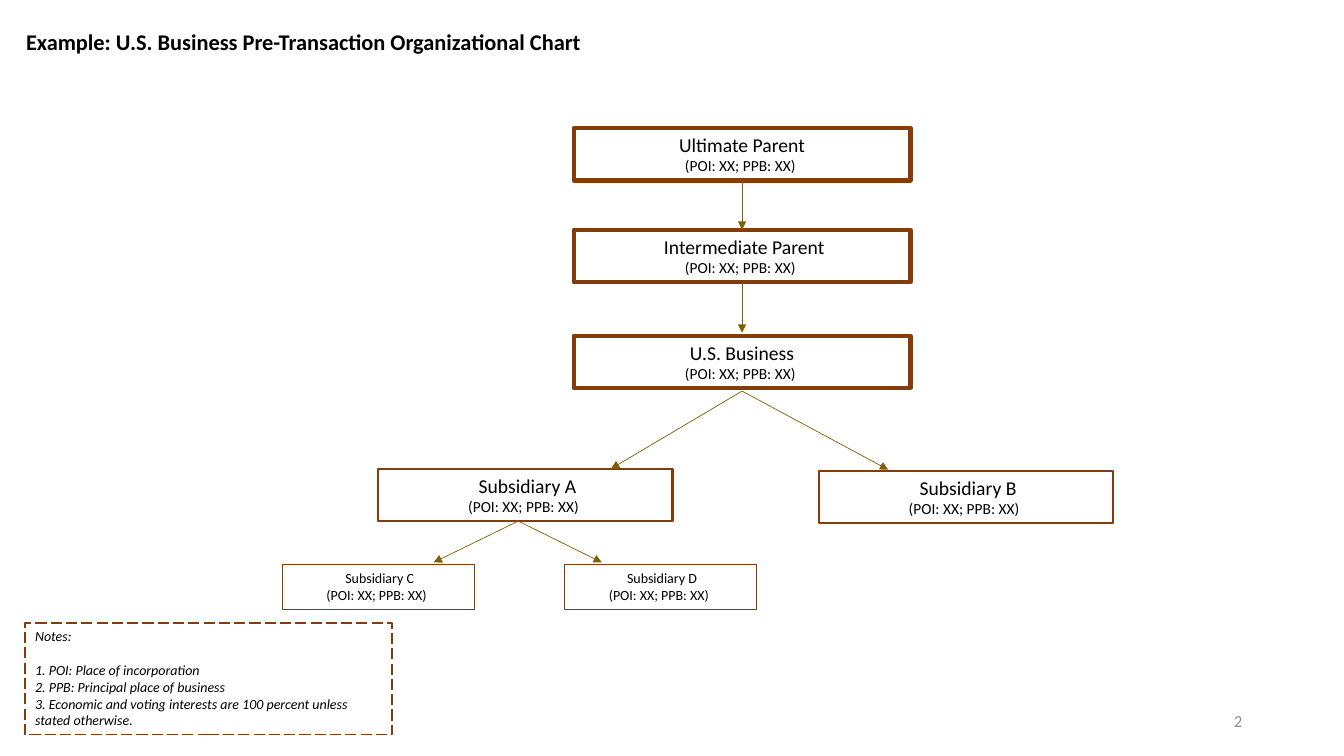
"""Build the pre-transaction organizational chart slide."""
from dataclasses import dataclass

from lxml import etree
from pptx import Presentation
from pptx.dml.color import RGBColor
from pptx.enum.dml import MSO_LINE
from pptx.enum.shapes import MSO_CONNECTOR, MSO_SHAPE
from pptx.enum.text import MSO_ANCHOR, PP_ALIGN
from pptx.oxml.ns import qn
from pptx.util import Inches, Pt

RECTANGLE = MSO_SHAPE.RECTANGLE
STRAIGHT = MSO_CONNECTOR.STRAIGHT
LONG_DASH = MSO_LINE.LONG_DASH
TOP, MIDDLE = MSO_ANCHOR.TOP, MSO_ANCHOR.MIDDLE
LEFT, CENTER, RIGHT = PP_ALIGN.LEFT, PP_ALIGN.CENTER, PP_ALIGN.RIGHT


@dataclass(frozen=True)
class Theme:
    """Colours, font and type sizes of the slide."""
    font: str = "Calibri"
    ink: str = "000000"
    paper: str = "FFFFFF"
    border: str = "843C0B"
    arrow: str = "806000"
    muted: str = "8C8C8C"
    title: int = 16
    name: int = 14
    detail: int = 11
    small: int = 10
    page_number: int = 12


THEME = Theme()
SLIDE_SIZE = (13.33, 7.5)
TITLE = "Example: U.S. Business Pre-Transaction Organizational Chart"
PAGE_NUMBER = "2"
DETAIL = "(POI: XX; PPB: XX) "
NOTES = [
    "Notes:",
    "1. POI: Place of incorporation",
    "2. PPB: Principal place of business",
    "3. Economic and voting interests are 100 percent unless stated otherwise.",
]

TIERS = {
    "parent": (3.34, 0.52, 3, THEME.name, THEME.detail),
    "subsidiary": (2.92, 0.52, 1.5, THEME.name, THEME.detail),
    "lower": (1.91, 0.44, 0.25, THEME.small, THEME.small),
}
AXIS = 7.36
ENTITIES = [
    ("Ultimate Parent", "parent", AXIS, 1.27),
    (" Intermediate Parent", "parent", AXIS, 2.28),
    ("U.S. Business", "parent", AXIS, 3.33),
    (" Subsidiary A", "subsidiary", 5.21, 4.65),
    (" Subsidiary B", "subsidiary", 9.58, 4.67),
    (" Subsidiary C", "lower", 3.75, 5.6),
    (" Subsidiary D", "lower", 6.55, 5.6),
]
BUSINESS_FORK, SUBSIDIARY_FORK = (AXIS, 3.88), (5.14, 5.17)
ARROWS = [
    ((AXIS, 1.79), (AXIS, 2.28)),
    ((AXIS, 2.81), (AXIS, 3.3)),
    (BUSINESS_FORK, (6.06, 4.65)),
    (BUSINESS_FORK, (8.81, 4.66)),
    (SUBSIDIARY_FORK, (4.3, 5.58)),
    (SUBSIDIARY_FORK, (5.97, 5.58)),
]


def write(box, lines, align=LEFT, anchor=TOP, color=THEME.ink, bold=False, italic=False):
    """Fill a box with (text, size, space before) lines."""
    frame = box.text_frame
    frame.word_wrap = True
    frame.vertical_anchor = anchor
    for index, (text, size, gap) in enumerate(lines):
        para = frame.add_paragraph() if index else frame.paragraphs[0]
        para.text = text
        para.alignment = align
        if gap:
            para.space_before = Pt(gap)
        font = para.font
        font.name, font.size, font.bold, font.italic = THEME.font, Pt(size), bold, italic
        font.color.rgb = RGBColor.from_string(color)


def add_label(page, area, text, size, **style):
    """Add a one-line text box."""
    write(page.shapes.add_textbox(*map(Inches, area)), [(text, size, 0)], **style)


def add_box(page, area, weight):
    """Add a bordered rectangle without fill."""
    box = page.shapes.add_shape(RECTANGLE, *map(Inches, area))
    box.shadow.inherit = False
    box.fill.background()
    box.line.color.rgb = RGBColor.from_string(THEME.border)
    box.line.width = Pt(weight)
    return box


def add_entity(page, name, tier, center, top):
    """Add one company box centred on a column."""
    width, height, weight, name_size, detail_size = TIERS[tier]
    box = add_box(page, (center - width / 2, top, width, height), weight)
    box.fill.solid()
    box.fill.fore_color.rgb = RGBColor.from_string(THEME.paper)
    write(box, [(name, name_size, 0), (DETAIL, detail_size, 0)], align=CENTER)


def add_arrow(page, start, end):
    """Add a thin line with an arrowhead at its end."""
    arrow = page.shapes.add_connector(STRAIGHT, *map(Inches, start + end))
    arrow.line.color.rgb = RGBColor.from_string(THEME.arrow)
    arrow.line.width = Pt(0.5)
    etree.SubElement(arrow.line._get_or_add_ln(), qn("a:tailEnd"), type="triangle")
    etree.SubElement(arrow._element.spPr, qn("a:effectLst"))


def add_notes_box(page):
    """Add the dashed box of notes."""
    box = add_box(page, (0.25, 6.18, 3.64, 1.11), 1)
    box.line.dash_style = LONG_DASH
    lines = [(text, THEME.small, 12 if row == 1 else 0) for row, text in enumerate(NOTES)]
    write(box, lines, italic=True)


def main():
    """Build and save the deck."""
    deck = Presentation()
    deck.slide_width, deck.slide_height = map(Inches, SLIDE_SIZE)
    page = deck.slides.add_slide(deck.slide_layouts[6])
    add_label(page, (0.16, 0.23, 6.67, 0.37), TITLE, THEME.title, bold=True)
    add_label(page, (9.42, 6.95, 3, 0.4), PAGE_NUMBER, THEME.page_number,
              align=RIGHT, anchor=MIDDLE, color=THEME.muted)
    for entity in ENTITIES:
        add_entity(page, *entity)
    for start, end in ARROWS:
        add_arrow(page, start, end)
    add_notes_box(page)
    deck.save("out.pptx")


if __name__ == "__main__":
    main()
